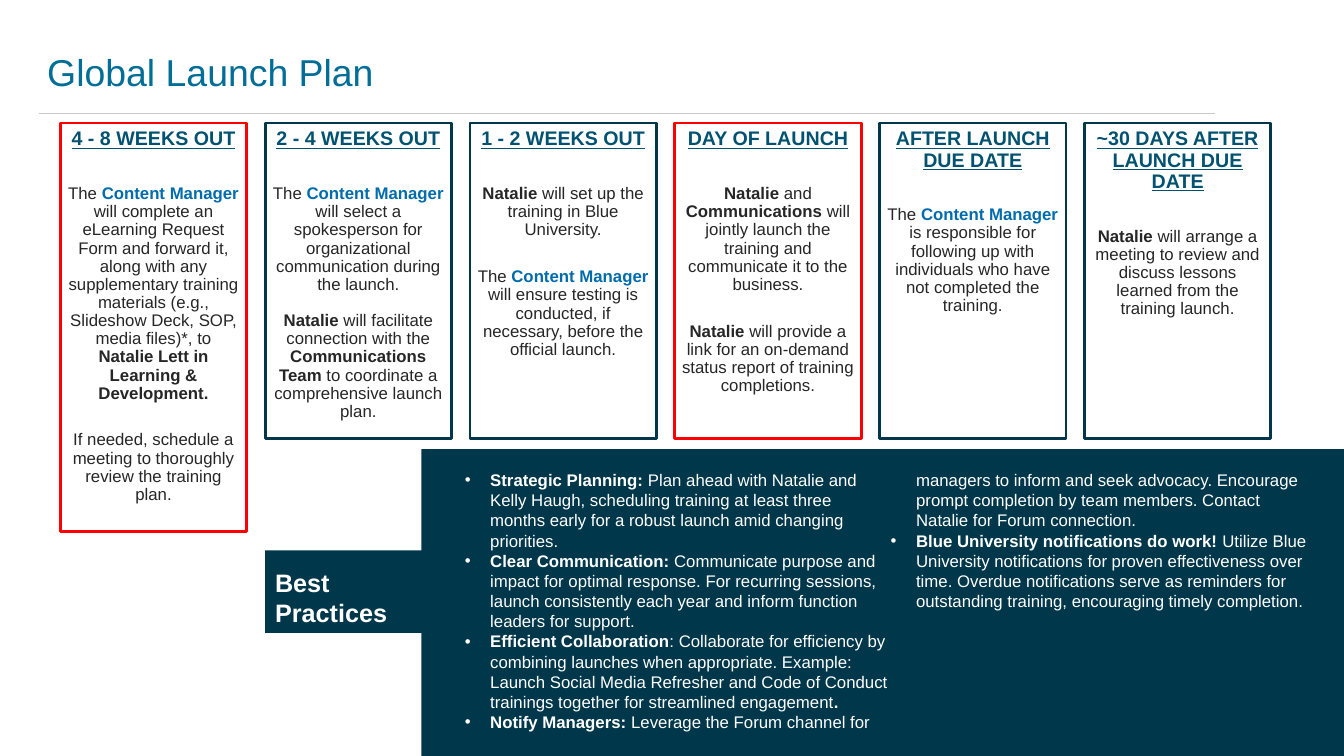
import pptx
import pptx.util
import pptx.dml.color
import pptx.enum.shapes
import pptx.enum.text
from lxml import etree
from pptx.util import Cm, Pt

NAVY, RED, WHITE = "00374B", "FF0000", "FFFFFF"
HEADING, ROLE, TEXT = "005270", "006CAD", "262626"
TITLE, RULE = "006E96", "C8C8C8"
ALIGN = pptx.enum.text.PP_ALIGN
ANCHOR = pptx.enum.text.MSO_ANCHOR
ROLE_NAME = "Content Manager"

STAGES = [
    ("4 - 8 WEEKS OUT", RED, 10.29, 20.5, [
        "The |Content Manager| will complete an eLearning Request Form and forward it, "
        "along with any supplementary training materials (e.g., Slideshow Deck, SOP, "
        "media files)*, to |Natalie Lett in Learning & Development.",
        "If needed, schedule a meeting to thoroughly review the training plan."]),
    ("2 - 4 WEEKS OUT", NAVY, 7.95, 13, [
        "The |Content Manager| will select a spokesperson for organizational "
        "communication during the launch.",
        "|Natalie| will facilitate connection with the |Communications Team| to "
        "coordinate a comprehensive launch plan."]),
    ("1 - 2 WEEKS OUT", NAVY, 7.95, 20.5, [
        "|Natalie| will set up the training in Blue University.",
        "The |Content Manager| will ensure testing is conducted, if necessary, "
        "before the official launch."]),
    ("DAY OF LAUNCH", RED, 7.95, 20.5, [
        "|Natalie| and |Communications| will jointly launch the training and "
        "communicate it to the business.",
        "|Natalie| will provide a link for an on-demand status report of training "
        "completions."]),
    ("AFTER LAUNCH DUE DATE", NAVY, 7.95, 20.5, [
        "The |Content Manager| is responsible for following up with individuals who "
        "have not completed the training."]),
    ("~30 DAYS AFTER LAUNCH DUE DATE", NAVY, 7.95, 20.5, [
        "|Natalie| will arrange a meeting to review and discuss lessons learned from "
        "the training launch."]),
]

PRACTICES = [
    "|Strategic Planning:| Plan ahead with Natalie and Kelly Haugh, scheduling training "
    "at least three months early for a robust launch amid changing priorities.",
    "|Clear Communication:| Communicate purpose and impact for optimal response. For "
    "recurring sessions, launch consistently each year and inform function leaders for "
    "support.",
    "|Efficient Collaboration|: Collaborate for efficiency by combining launches when "
    "appropriate. Example: Launch Social Media Refresher and Code of Conduct trainings "
    "together for streamlined engagement|.",
    "|Notify Managers:| Leverage the Forum channel for managers to inform and seek "
    "advocacy. Encourage prompt completion by team members. Contact Natalie for Forum "
    "connection.",
    "|Blue University notifications do work!| Utilize Blue University notifications for "
    "proven effectiveness over time. Overdue notifications serve as reminders for "
    "outstanding training, encouraging timely completion.",
]


def rgb(color):
    return pptx.dml.color.RGBColor.from_string(color)


def set_font(font, size, color, bold=False):
    font.name = "Arial"
    font.size = Pt(size)
    font.bold = bold
    font.color.rgb = rgb(color)


def set_frame(tf, anchor, inset_x, inset_y):
    tf.word_wrap = True
    tf.auto_size = pptx.enum.text.MSO_AUTO_SIZE.NONE
    tf.vertical_anchor = anchor
    tf.margin_left = tf.margin_right = Cm(inset_x)
    tf.margin_top = tf.margin_bottom = Cm(inset_y)


def add_marked_runs(p, text, color):
    for i, part in enumerate(text.split("|")):
        if part:
            r = p.add_run()
            r.text = part
            set_font(r.font, 12, ROLE if part == ROLE_NAME else color, i % 2 == 1)


def place(sp, left, top, width, height):
    sp.left, sp.top = Cm(left), Cm(top)
    sp.width, sp.height = Cm(width), Cm(height)


def add_box(slide, left, top, width, height, fill=None, line=None):
    sp = slide.shapes.add_shape(pptx.enum.shapes.MSO_SHAPE.RECTANGLE,
                                Cm(left), Cm(top), Cm(width), Cm(height))
    sp.shadow.inherit = False
    if fill:
        sp.fill.solid()
        sp.fill.fore_color.rgb = rgb(fill)
    else:
        sp.fill.background()
    if line:
        sp.line.color.rgb = rgb(line)
        sp.line.width = Pt(2)
    else:
        sp.line.fill.background()
    return sp


def add_rule(slide, left, right, y):
    line = slide.shapes.add_connector(pptx.enum.shapes.MSO_CONNECTOR.STRAIGHT,
                                      Cm(left), Cm(y), Cm(right), Cm(y))
    line.line.color.rgb = rgb(RULE)
    line.line.width = Pt(0.75)
    etree.SubElement(line.element.spPr, pptx.oxml.ns.qn("a:effectLst"))


def add_stage(slide, left, heading, border, height, gap, texts):
    tf = add_box(slide, left, 3.1, 4.7, height, line=border).text_frame
    set_frame(tf, ANCHOR.TOP, 0.15, 0.15)
    p = tf.paragraphs[0]
    p.text = heading
    set_font(p.font, 14, HEADING, True)
    p.font.underline = True
    p.space_after = Pt(25)
    for text in texts:
        p = tf.add_paragraph()
        add_marked_runs(p, text, TEXT)
        p.space_after = Pt(gap if text != texts[-1] else 0)
    for p in tf.paragraphs:
        p.alignment = ALIGN.CENTER
        p.line_spacing = 0.9


def fill_title(title):
    place(title, 0.94, 0.43, 29.64, 2.08)
    tf = title.text_frame
    set_frame(tf, ANCHOR.BOTTOM, 0.25, 0.13)
    p = tf.paragraphs[0]
    p.text = "Global Launch Plan"
    p.alignment = ALIGN.LEFT
    set_font(p.font, 26.7, TITLE)


def fill_practices(body):
    place(body, 11.38, 11.66, 22.12, 7.16)
    tf = body.text_frame
    set_frame(tf, ANCHOR.TOP, 0.33, 0.18)
    body_pr = tf.paragraphs[0]._p.getparent().find(pptx.oxml.ns.qn("a:bodyPr"))
    body_pr.set("numCol", "2")
    body_pr.set("spcCol", "0")
    for i, text in enumerate(PRACTICES):
        p = tf.add_paragraph() if i else tf.paragraphs[0]
        p_pr = p._p.get_or_add_pPr()
        p_pr.set("marL", str(Cm(0.64)))
        p_pr.set("indent", str(-Cm(0.64)))
        p.space_before = Pt(0)
        add_marked_runs(p, text, WHITE)


def add_label(slide):
    tf = add_box(slide, 6.68, 13.87, 4.55, 2.08, fill=NAVY).text_frame
    set_frame(tf, ANCHOR.BOTTOM, 0.25, 0.13)
    p = tf.paragraphs[0]
    p.text = "Best Practices"
    p.alignment = ALIGN.LEFT
    set_font(p.font, 18, WHITE, True)


def main():
    prs = pptx.Presentation()
    prs.slide_width, prs.slide_height = Cm(33.86), Cm(19.05)
    slide = prs.slides.add_slide(prs.slide_layouts[1])
    title, body = slide.placeholders
    add_rule(slide, 0.97, 30.61, 2.87)
    fill_title(title)
    panel = add_box(slide, 10.62, 11.32, 23.24, 7.73, fill=NAVY)
    for i, stage in enumerate(STAGES):
        add_stage(slide, 1.52 + 5.16 * i, *stage)
    fill_practices(body)
    panel.element.addnext(body.element)
    add_label(slide)
    prs.save("out.pptx")


if __name__ == "__main__":
    main()
